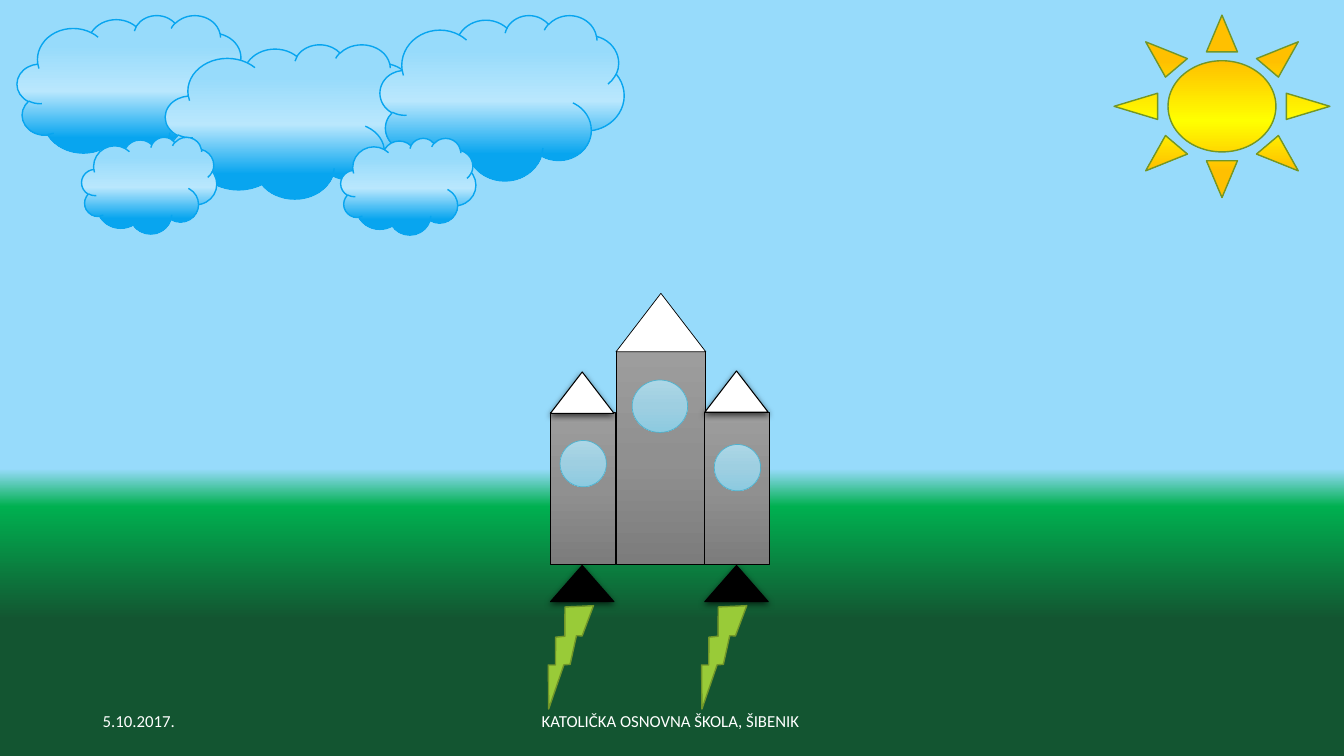
from lxml.etree import SubElement
from pptx import Presentation
from pptx.dml.color import RGBColor
from pptx.enum.shapes import MSO_SHAPE
from pptx.enum.text import MSO_ANCHOR, PP_ALIGN
from pptx.oxml.ns import qn
from pptx.util import Inches, Pt

BLACK = RGBColor(0x00, 0x00, 0x00)
WHITE = RGBColor(0xFF, 0xFF, 0xFF)
SKY = RGBColor(0x97, 0xDB, 0xFB)
PALE = RGBColor(0xB9, 0xE7, 0xFD)
BLUE = RGBColor(0x08, 0xA5, 0xEF)
GRASS = RGBColor(0x00, 0xB0, 0x50)
DARK = RGBColor(0x13, 0x55, 0x31)
GOLD = RGBColor(0xFF, 0xC0, 0x00)
YELLOW = RGBColor(0xFF, 0xFF, 0x00)
OLIVE = RGBColor(0x71, 0x96, 0x29)
LIME = RGBColor(0x99, 0xCB, 0x38)
RIM = RGBColor(0x4E, 0xB3, 0xCF)

FIELD = ((62, SKY), (67, GRASS), (82, DARK), (91, DARK))
SHINE = ((25, GOLD), (58, YELLOW), (85, GOLD))
MIST = ((21, SKY), (52, PALE), (84, BLUE))
STONE = ((0, RGBColor(0x9D, 0x9D, 0x9D)), (50, RGBColor(0x90, 0x90, 0x90)),
         (100, RGBColor(0x7C, 0x7C, 0x7C)))
GLASS = ((0, RGBColor(0xAC, 0xD6, 0xE6)), (50, RGBColor(0x9E, 0xCF, 0xE1)),
         (100, RGBColor(0x8C, 0xCA, 0xE0)))

CELL = Inches(0.1)

deck = Presentation()
deck.slide_width = Inches(13.33)
deck.slide_height = Inches(7.5)
slide = deck.slides.add_slide(deck.slide_layouts[6])


def blend(fill, root, stops):
    fill.gradient()
    fill.gradient_angle = 270
    ramp = next(root.iter(qn("a:gsLst")))
    for old in list(ramp):
        ramp.remove(old)
    for pos, color in stops:
        stop = SubElement(ramp, qn("a:gs"), pos=str(pos * 1000))
        SubElement(stop, qn("a:srgbClr"), val=str(color))


def write(text, col, row, cols, rows, size=12, font="Calibri", color=WHITE,
          align=PP_ALIGN.LEFT):
    box = slide.shapes.add_textbox(*[int(n * CELL) for n in (col, row, cols, rows)])
    frame = box.text_frame
    frame.word_wrap = True
    frame.vertical_anchor = MSO_ANCHOR.MIDDLE
    line = frame.paragraphs[0]
    line.alignment = align
    run = line.add_run()
    run.text = text
    run.font.size = Pt(size)
    run.font.name = font
    run.font.color.rgb = color


blend(slide.background.fill, slide._element, FIELD)

parts = [(MSO_SHAPE.SUN, (110.5, 1.5, 21.4, 18.1), SHINE, OLIVE, 1, 0, False)]

clouds = ((1.7, 1.5, 22.7, 14.5), (16.4, 4.4, 25.1, 15.3), (37.7, 1.5, 24.2, 16.4),
          (8.1, 13.6, 13.4, 9.6), (33.8, 13.7, 13.4, 9.6))
for place in clouds:
    parts.append((MSO_SHAPE.CLOUD, place, MIST, BLUE, 1, 0, False))

parts += [
    (MSO_SHAPE.RECTANGLE, (61.1, 34.9, 8.9, 21.1), STONE, BLACK, 0.5, 0, False),
    (MSO_SHAPE.ISOSCELES_TRIANGLE, (61.1, 29.1, 8.9, 5.8), WHITE, BLACK, 0.5, 0, False),
    (MSO_SHAPE.OVAL, (62.7, 37.7, 5.5, 5.2), GLASS, RIM, 0.5, 0, False),
]

for left, roof, pane, bolt in ((54.6, 36.9, 43.7, 53.2), (69.9, 36.8, 44.1, 68.4)):
    parts += [
        (MSO_SHAPE.RECTANGLE, (left, 40.9, 6.4, 15.1), STONE, BLACK, 0.5, 0, False),
        (MSO_SHAPE.ISOSCELES_TRIANGLE, (left, 56.1, 6.3, 3.6), BLACK, BLACK, 0.75, 0, True),
        (MSO_SHAPE.ISOSCELES_TRIANGLE, (left, roof, 6.3, 4.1), WHITE, BLACK, 0.75, 0, True),
        (MSO_SHAPE.OVAL, (left + 0.95, pane, 4.6, 4.6), GLASS, RIM, 0.5, 0, False),
        (MSO_SHAPE.LIGHTNING_BOLT, (bolt, 59.2, 5.3, 10.7), LIME, OLIVE, 1, 40.2, False),
    ]

for kind, place, fill, edge, width, turn, shade in parts:
    shape = slide.shapes.add_shape(kind, *[int(n * CELL) for n in place])
    shape.rotation = turn
    if isinstance(fill, RGBColor):
        shape.fill.solid()
        shape.fill.fore_color.rgb = fill
    else:
        blend(shape.fill, shape._element, fill)
    shape.line.color.rgb = edge
    shape.line.width = Pt(width)
    shape.shadow.inherit = False
    if shade:
        glow = SubElement(next(shape._element.iter(qn("a:effectLst"))), qn("a:outerShdw"),
                          blurRad=str(Pt(4.5)), dist=str(Pt(1.5)), dir="5400000",
                          algn="ctr", rotWithShape="0")
        tone = SubElement(glow, qn("a:srgbClr"), val=str(BLACK))
        SubElement(tone, qn("a:alpha"), val="63000")

write("5.10.2017.", 9.2, 69.5, 30, 4)
write("KATOLIČKA OSNOVNA ŠKOLA, ŠIBENIK ", 44.2, 69.5, 45, 4, align=PP_ALIGN.CENTER)

deck.save("out.pptx")
